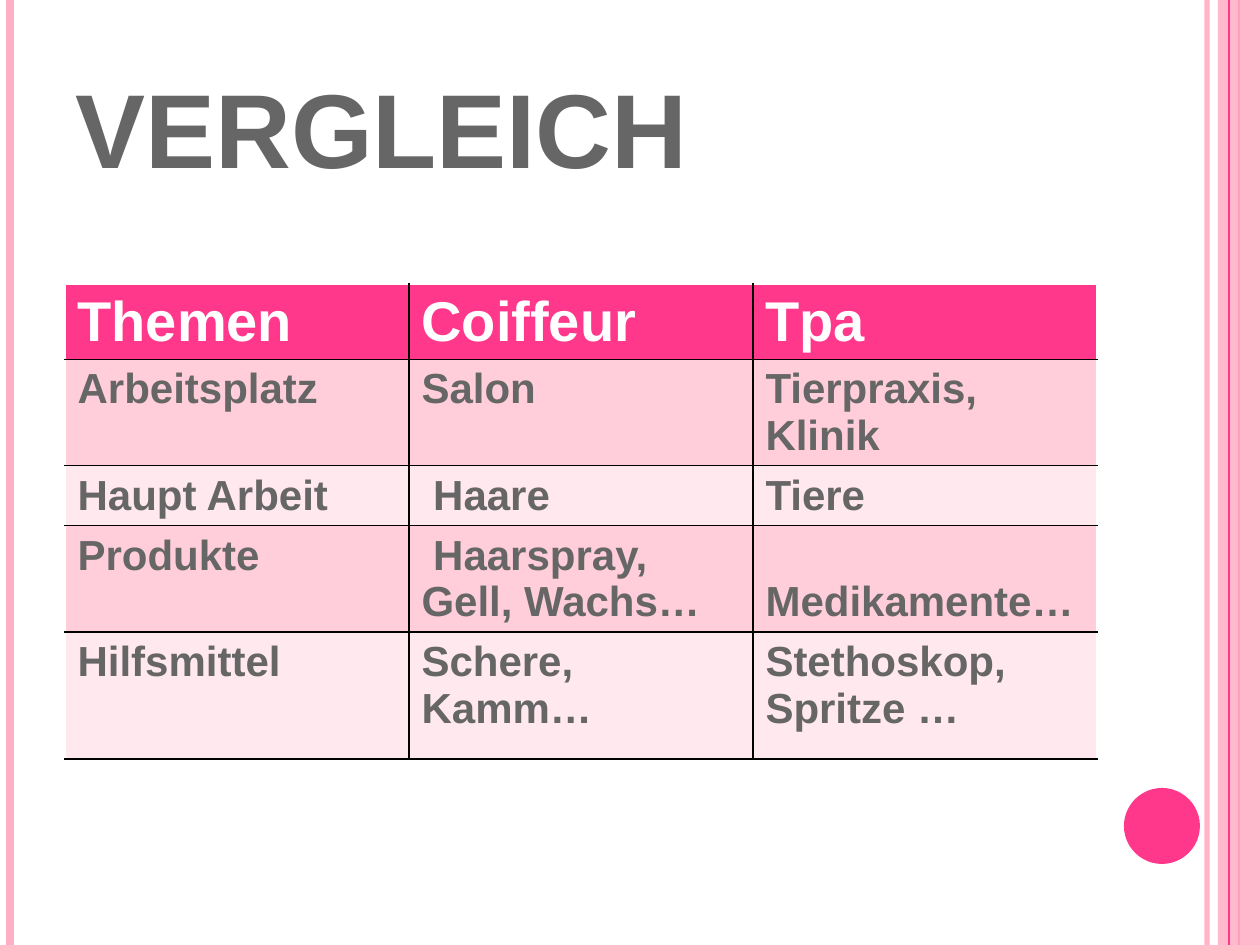
"""Build the comparison slide with a title, a themed table and pink side decoration."""
from typing import NamedTuple

from lxml import etree
from pptx import Presentation
from pptx.dml.color import RGBColor
from pptx.enum.shapes import MSO_CONNECTOR, MSO_SHAPE
from pptx.enum.text import MSO_ANCHOR, MSO_AUTO_SIZE, PP_ALIGN
from pptx.oxml.ns import qn
from pptx.util import Emu, Pt

STRAIGHT = MSO_CONNECTOR.STRAIGHT
RECTANGLE, OVAL = MSO_SHAPE.RECTANGLE, MSO_SHAPE.OVAL
BOTTOM, LEFT = MSO_ANCHOR.BOTTOM, PP_ALIGN.LEFT
NO_AUTOFIT = MSO_AUTO_SIZE.NONE

EMU_PER_PX = 914400 / 126
SLIDE_WIDTH, SLIDE_HEIGHT = 1260, 945
FONT = "Arial"
PINK, PALE_PINK = "FF388C", "FFAFC5"
BAND_DARK, BAND_LIGHT = "FFCEDA", "FFE8EE"
WHITE, BLACK, GREY = "FFFFFF", "000000", "666666"

TABLE_LEFT, TABLE_TOP, COLUMN_WIDTH = 65, 284, 344
ROW_HEIGHTS = (74, 106, 60, 106, 127)
COMPARISON = (
    ("Themen", "Coiffeur", "Tpa"),
    ("Arbeitsplatz", "Salon", "Tierpraxis, Klinik"),
    ("Haupt Arbeit", " Haare", "Tiere"),
    ("Produkte", " Haarspray, Gell, Wachs…", " Medikamente…"),
    ("Hilfsmittel", "Schere, Kamm…", "Stethoskop, Spritze …"),
)


class Stripe(NamedTuple):
    """A vertical line over the full slide height."""
    x: int
    color: str
    weight: float
    opacity: int = 100


class Panel(NamedTuple):
    """A filled shape without outline."""
    kind: MSO_SHAPE
    left: int
    top: int
    width: int
    height: int
    color: str
    opacity: int = 100


DECORATION = (
    Stripe(1207, PALE_PINK, 3, 93),
    Stripe(10, PALE_PINK, 4.5),
    Stripe(1239, PINK, 1.5),
    Panel(RECTANGLE, 1218, 0, 42, SLIDE_HEIGHT, PALE_PINK, 87),
    Stripe(1229, PINK, 0.75),
    Panel(OVAL, 1124, 788, 76, 76, PINK),
)


def px(length: int) -> Emu:
    """Turn pixels into EMU."""
    return Emu(round(length * EMU_PER_PX))


def rgb(color: str) -> RGBColor:
    """Turn a hex string into a colour."""
    return RGBColor.from_string(color)


def set_opacity(properties, opacity: int) -> None:
    """Make the first solid colour of the element partly transparent."""
    if opacity < 100:
        color = next(properties.iter(qn("a:srgbClr")))
        etree.SubElement(color, qn("a:alpha"), val=str(opacity * 1000))


def draw_stripe(slide, stripe: Stripe) -> None:
    """Draw one vertical line."""
    x = px(stripe.x)
    line = slide.shapes.add_connector(STRAIGHT, x, 0, x, px(SLIDE_HEIGHT))
    line.line.color.rgb = rgb(stripe.color)
    line.line.width = Pt(stripe.weight)
    properties = line._element.spPr
    set_opacity(properties, stripe.opacity)
    etree.SubElement(properties, qn("a:effectLst"))


def draw_panel(slide, panel: Panel) -> None:
    """Draw one filled shape."""
    box = map(px, (panel.left, panel.top, panel.width, panel.height))
    shape = slide.shapes.add_shape(panel.kind, *box)
    shape.shadow.inherit = False
    shape.fill.solid()
    shape.fill.fore_color.rgb = rgb(panel.color)
    shape.line.fill.background()
    set_opacity(shape._element.spPr, panel.opacity)


def write(paragraph, text: str, size: int, color: str) -> None:
    """Add one bold run to the paragraph."""
    run = paragraph.add_run()
    run.text = text
    run.font.name = FONT
    run.font.size = Pt(size)
    run.font.bold = True
    run.font.color.rgb = rgb(color)


def set_borders(cell, colors: dict[str, str]) -> None:
    """Put one-point borders before the fill of the cell."""
    properties = cell._tc.get_or_add_tcPr()
    for position, (side, color) in enumerate(colors.items()):
        border = etree.Element(qn(f"a:{side}"), w=str(Pt(1)))
        fill = etree.SubElement(border, qn("a:solidFill"))
        etree.SubElement(fill, qn("a:srgbClr"), val=color)
        properties.insert(position, border)


def draw_title(slide, text: str) -> None:
    """Place and fill the title placeholder."""
    title = slide.shapes.title
    title.left, title.top, title.width, title.height = map(px, (63, 38, 1029, 158))
    frame = title.text_frame
    frame.auto_size = NO_AUTOFIT
    frame.vertical_anchor = BOTTOM
    frame.paragraphs[0].alignment = LEFT
    write(frame.paragraphs[0], text, 60, GREY)


def draw_comparison(slide) -> None:
    """Draw the table with a pink header and two alternating bands."""
    last_column = len(COMPARISON[0]) - 1
    table = slide.shapes.add_table(
        len(COMPARISON), last_column + 1, px(TABLE_LEFT), px(TABLE_TOP),
        px(COLUMN_WIDTH * (last_column + 1)), px(sum(ROW_HEIGHTS))).table
    for column in table.columns:
        column.width = px(COLUMN_WIDTH)
    for r, (topics, height) in enumerate(zip(COMPARISON, ROW_HEIGHTS)):
        table.rows[r].height = px(height)
        band = PINK if r == 0 else BAND_DARK if r % 2 else BAND_LIGHT
        size, color = (32, WHITE) if r == 0 else (24, GREY)
        for c, topic in enumerate(topics):
            cell = table.cell(r, c)
            cell.fill.solid()
            cell.fill.fore_color.rgb = rgb(band)
            write(cell.text_frame.paragraphs[0], topic, size, color)
            set_borders(cell, {
                "lnL": WHITE if c == 0 else BLACK,
                "lnR": WHITE if c == last_column else BLACK,
                "lnT": WHITE if r == 0 else BLACK,
                "lnB": BLACK,
            })


def main() -> None:
    """Build and save the slide."""
    presentation = Presentation()
    presentation.slide_width = px(SLIDE_WIDTH)
    presentation.slide_height = px(SLIDE_HEIGHT)
    slide = presentation.slides.add_slide(presentation.slide_layouts[5])
    for part in DECORATION:
        if isinstance(part, Stripe):
            draw_stripe(slide, part)
        else:
            draw_panel(slide, part)
    draw_title(slide, "VERGLEICH")
    draw_comparison(slide)
    presentation.save("out.pptx")


if __name__ == "__main__":
    main()
